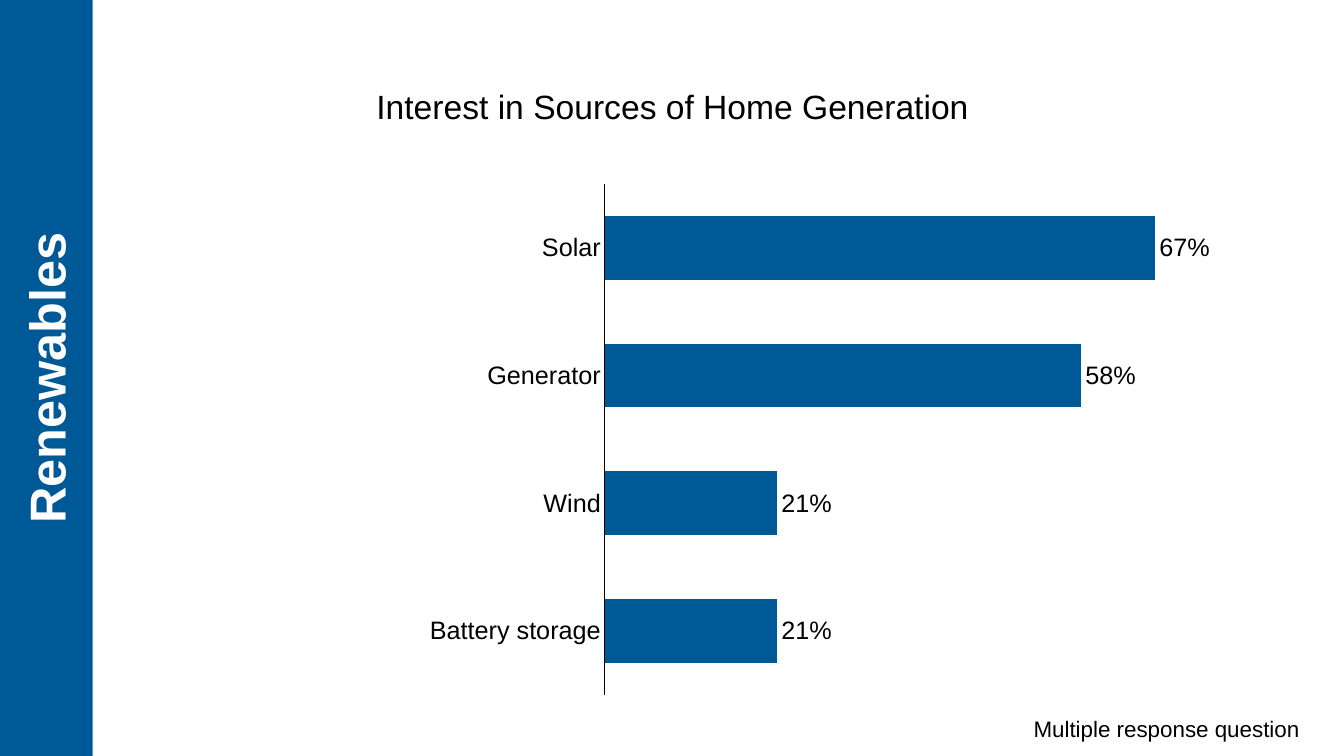
from lxml import etree
from pptx import Presentation
from pptx import util as u
from pptx.chart import data as chart_data
from pptx.dml.color import RGBColor
from pptx.enum import chart as ch, shapes, text
from pptx.oxml import parse_xml
from pptx.oxml.ns import nsdecls

COLORS = {"blue": "005997", "black": "000000", "white": "FFFFFF"}
FONT = "Arial"
INTEREST = {"Solar": 0.67, "Generator": 0.58, "Wind": 0.21, "Battery storage": 0.21}


def color(name):
    return RGBColor.from_string(COLORS[name])


def style_font(font, size, name="black", bold=False):
    font.name = FONT
    font.size = u.Pt(size)
    font.bold = bold
    font.color.rgb = color(name)


def write_centered(shape, words, size, name="black", bold=False):
    frame = shape.text_frame
    frame.text = words
    frame.word_wrap = True
    frame.auto_size = text.MSO_AUTO_SIZE.NONE
    frame.vertical_anchor = text.MSO_ANCHOR.MIDDLE
    paragraph = frame.paragraphs[0]
    paragraph.alignment = text.PP_ALIGN.CENTER
    style_font(paragraph.runs[0].font, size, name, bold)


def place_heading(slide, left, top, width, height):
    heading = slide.shapes.title
    heading.left, heading.top = u.Inches(left), u.Inches(top)
    heading.width, heading.height = u.Inches(width), u.Inches(height)
    write_centered(heading, "Interest in Sources of Home Generation", 24)


def add_section_band(slide, left, top, width, height):
    """Fill the box with a band whose label reads from bottom to top."""
    shift = (height - width) / 2
    band = slide.shapes.add_shape(
        shapes.MSO_SHAPE.RECTANGLE,
        u.Inches(left - shift), u.Inches(top + shift), u.Inches(height), u.Inches(width))
    band.rotation = 270
    band.shadow.inherit = False
    band.fill.solid()
    band.fill.fore_color.rgb = color("blue")
    band.line.fill.background()
    write_centered(band, "Renewables", 36, "white", bold=True)
    band.text_frame.margin_top = 0
    band.text_frame.margin_bottom = u.Inches(0.02)


def set_plot_area(chart, x, y, w, h):
    """Fix the inner plot area, in fractions of the chart."""
    parts = "".join(f'<c:{tag} val="{value}"/>'
                    for tag, value in zip("xywh", (x, y, w, h)))
    layout = parse_xml(
        f'<c:layout {nsdecls("c")}><c:manualLayout><c:layoutTarget val="inner"/>'
        f'<c:xMode val="edge"/><c:yMode val="edge"/>{parts}</c:manualLayout></c:layout>')
    plot_area = chart.plots[0]._element.getparent()
    for old in plot_area.findall(etree.QName(layout).text):
        plot_area.remove(old)
    plot_area.insert(0, layout)


def add_interest_chart(slide, left, top, width, height):
    interest = chart_data.CategoryChartData(number_format="0%")
    interest.categories = list(INTEREST)
    interest.add_series("Series 1", list(INTEREST.values()))
    chart = slide.shapes.add_chart(
        ch.XL_CHART_TYPE.BAR_CLUSTERED,
        u.Inches(left), u.Inches(top), u.Inches(width), u.Inches(height), interest).chart
    chart.has_legend = False
    chart.has_title = False
    style_font(chart.font, 18)
    set_plot_area(chart, 0.353, 0.007, 0.647, 0.993)

    sources = chart.category_axis
    sources.reverse_order = True
    sources.major_tick_mark = ch.XL_TICK_MARK.NONE
    sources.format.line.color.rgb = color("black")
    sources.format.line.width = u.Pt(1)
    style_font(sources.tick_labels.font, 18)

    shares = chart.value_axis
    shares.visible = False
    shares.has_major_gridlines = False
    shares.minimum_scale, shares.maximum_scale = 0, 0.8
    shares.major_unit = 0.1

    bars = chart.plots[0]
    bars.gap_width, bars.overlap = 100, -15
    bars.vary_by_categories = False
    fill = bars.series[0].format.fill
    fill.solid()
    fill.fore_color.rgb = color("blue")
    bars.has_data_labels = True
    labels = bars.data_labels
    labels.show_value = True
    labels.number_format, labels.number_format_is_linked = "0%", False
    labels.position = ch.XL_LABEL_POSITION.OUTSIDE_END
    style_font(labels.font, 18)


def add_footnote(slide, left, top, width, height):
    footnote = slide.shapes.add_textbox(
        u.Inches(left), u.Inches(top), u.Inches(width), u.Inches(height))
    write_centered(footnote, "Multiple response question", 16)


def main():
    deck = Presentation()
    deck.slide_width, deck.slide_height = u.Inches(13.33), u.Inches(7.5)
    slide = deck.slides.add_slide(deck.slide_layouts.get_by_name("Title Only"))
    add_interest_chart(slide, 2.44, 1.79, 10.08, 5.11)
    place_heading(slide, 2.44, 0.8, 8.46, 0.5)
    add_footnote(slide, 9.82, 7.04, 3.5, 0.37)
    add_section_band(slide, 0, 0, 0.92, 7.5)
    deck.save("out.pptx")


if __name__ == "__main__":
    main()
